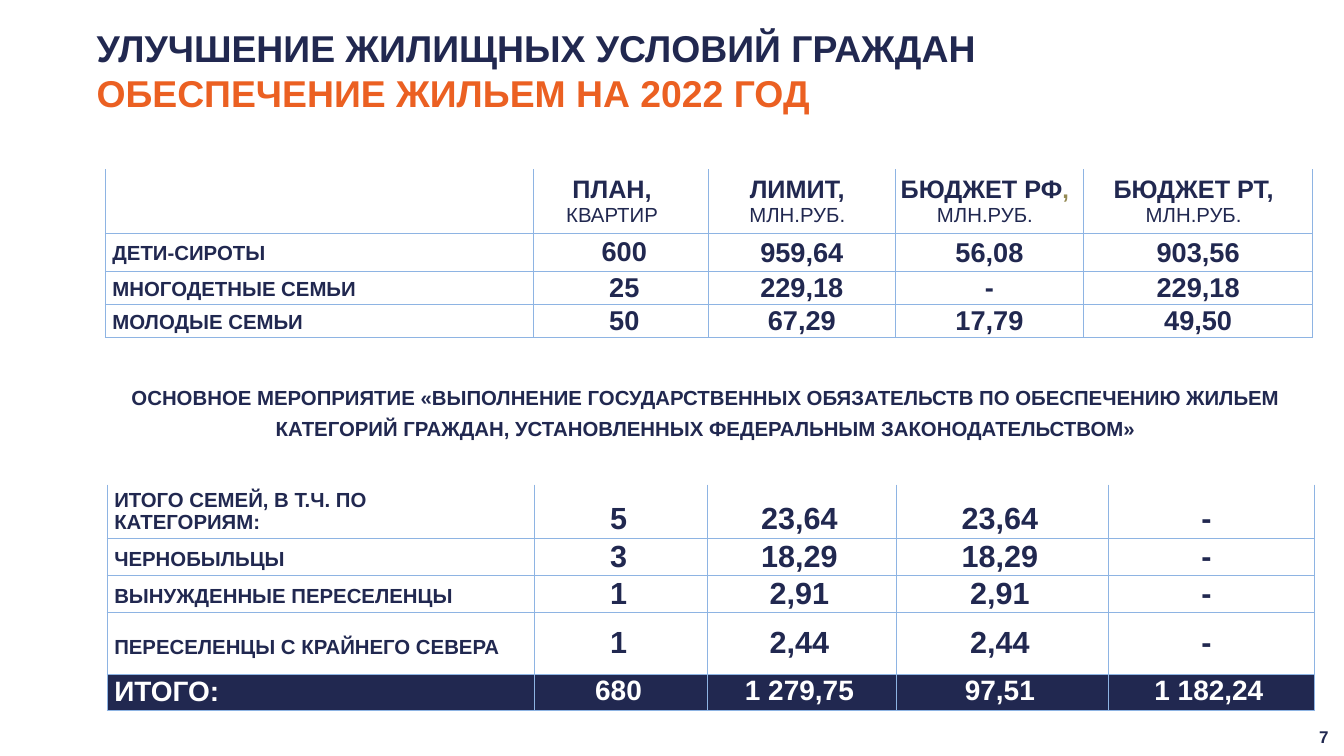
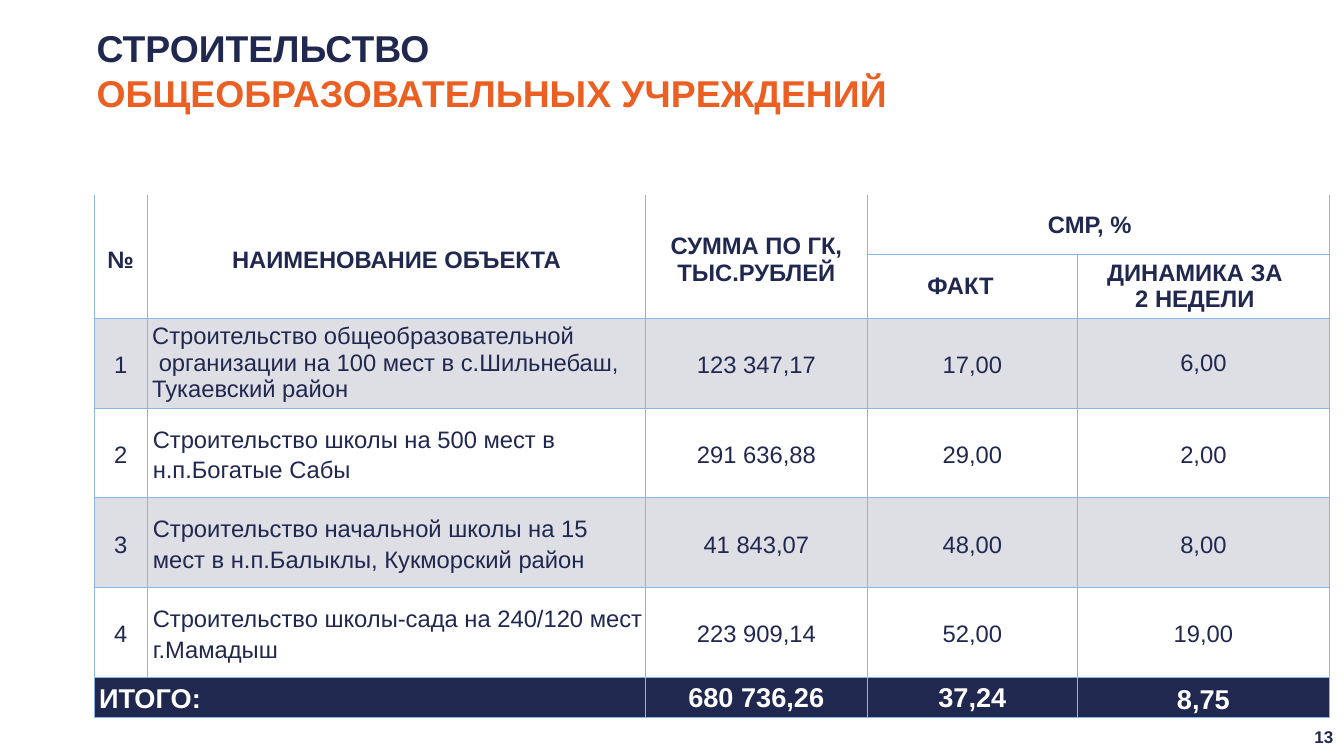
"""Build two slides with tables on housing provision and school construction."""
from lxml import etree
from pptx import Presentation
from pptx.dml.color import RGBColor
from pptx.enum.shapes import MSO_SHAPE as Shape
from pptx.enum.text import MSO_ANCHOR as Anchor, PP_ALIGN as Align
from pptx.oxml.ns import qn
from pptx.util import Pt

PX = 9144
SLIDE_SIZE = (2199, 1237)
NAVY = RGBColor(0x21, 0x28, 0x50)
ORANGE = RGBColor(0xEB, 0x60, 0x22)
OLIVE = RGBColor(0x94, 0x8A, 0x54)
WHITE = RGBColor(0xFF, 0xFF, 0xFF)
GREY = RGBColor(0xDE, 0xDF, 0xE5)
BORDER = RGBColor(0x8E, 0xB4, 0xE3)
BORDER_WIDTH = 12700

BASE = dict(size=24, bold=True, color=NAVY, align=Align.CENTER, line=None,
            anchor=Anchor.MIDDLE, insets=(0, 0, 0, 0), fill=WHITE)


def style(base=BASE, **changes):
    return {**base, **changes}


TITLE = style(size=44, align=Align.LEFT, anchor=Anchor.TOP, insets=(1, 2, 0, 0))
SUBTITLE = style(anchor=Anchor.TOP, line=Pt(36.3), insets=(0, 1, 0, 0))
NUMBER = style(size=20, insets=(10, 5, 10, 5))

HEADER = style(insets=(0, 0, 15, 0))
PLAN_HEADER = style(insets=(0, 0, 28, 0))
LABEL = style(align=Align.LEFT, insets=(12, 4, 0, 0))
COUNT = style(size=32, insets=(12, 0, 0, 0))
AMOUNT = style(size=32, insets=(1, 1, 1, 0))
FAMILY = [LABEL, COUNT] + [AMOUNT] * 3


def category_styles(label_top, value_top, anchor=Anchor.MIDDLE, label_right=0):
    label = style(LABEL, insets=(12, label_top, label_right, 0))
    value = style(size=36, anchor=anchor, insets=(0, value_top, 8, 0))
    return [label] + [value] * 3 + [style(value, insets=(0, value_top, 16, 0))]


SUM_VALUE = style(size=33, color=WHITE, fill=NAVY, anchor=Anchor.TOP, insets=(0, 1, 8, 0))
SUM_LABEL = style(SUM_VALUE, align=Align.LEFT, insets=(12, 4, 0, 0))

COLUMN_HEAD = style(size=28, insets=(0, 12, 0, 0))
SHARE_HEAD = style(size=28, insets=(0, 0, 28, 0))
SCHOOL_HEAD = [COLUMN_HEAD, COLUMN_HEAD, style(COLUMN_HEAD, insets=(0, 10, 0, 0)),
               SHARE_HEAD, SHARE_HEAD]
SCHOOL_VALUE = style(size=28, bold=False, line=1.15, insets=(1, 1, 1, 0))
SCHOOL_NAME = style(SCHOOL_VALUE, align=Align.LEFT, insets=(9, 1, 1, 0))
SCHOOL = [SCHOOL_VALUE, SCHOOL_NAME] + [SCHOOL_VALUE] * 3
SCHOOL_GREY = [style(item, fill=GREY) for item in SCHOOL]
SCHOOL_FIRST = [SCHOOL_GREY[0], style(SCHOOL_GREY[1], line=None, insets=(8, 0, 0, 0)),
                *SCHOOL_GREY[2:4], style(SCHOOL_GREY[4], line=None, insets=(0, 0, 0, 0))]
TOTAL_VALUE = style(size=32, color=WHITE, fill=NAVY, insets=(2, 2, 2, 0))
TOTAL_LABEL = style(TOTAL_VALUE, align=Align.LEFT, line=1.15, insets=(8, 0, 0, 0))
TOTAL = [TOTAL_LABEL, TOTAL_LABEL, TOTAL_VALUE, TOTAL_VALUE, style(TOTAL_VALUE, line=1.15)]


def unit_header(name, comma, unit):
    return [(name, dict(size=29.7)), (comma, dict(size=28, color=OLIVE)), (unit, dict(bold=False))]


SLIDES = [
    dict(
        number="7",
        title=("УЛУЧШЕНИЕ ЖИЛИЩНЫХ УСЛОВИЙ ГРАЖДАН", "ОБЕСПЕЧЕНИЕ ЖИЛЬЕМ НА 2022 ГОД"),
        subtitle="ОСНОВНОЕ МЕРОПРИЯТИЕ «ВЫПОЛНЕНИЕ ГОСУДАРСТВЕННЫХ ОБЯЗАТЕЛЬСТВ ПО ОБЕСПЕЧЕНИЮ "
                 "ЖИЛЬЕМ КАТЕГОРИЙ ГРАЖДАН, УСТАНОВЛЕННЫХ ФЕДЕРАЛЬНЫМ ЗАКОНОДАТЕЛЬСТВОМ»",
        tables=[
            dict(at=(172, 277), widths=(700, 287, 306, 308, 375), merges=[], rows=[
                (105, [None, unit_header("ПЛАН,", " ", "КВАРТИР"),
                       unit_header("ЛИМИТ,", " ", "МЛН.РУБ."),
                       unit_header("БЮДЖЕТ РФ", ", ", "МЛН.РУБ."),
                       [("БЮДЖЕТ РТ, ", dict(size=29.7)), ("МЛН.РУБ.", dict(bold=False))]],
                 [LABEL, PLAN_HEADER, HEADER, HEADER, HEADER]),
                (62, ["ДЕТИ-СИРОТЫ", "600", "959,64", "56,08", "903,56"], FAMILY),
                (50, ["МНОГОДЕТНЫЕ СЕМЬИ", "25", "229,18", "-", "229,18"], FAMILY),
                (50, ["МОЛОДЫЕ СЕМЬИ", "50", "67,29", "17,79", "49,50"], FAMILY),
            ]),
            dict(at=(175, 793), widths=(700, 282, 310, 346, 338), merges=[], rows=[
                (75, ["ИТОГО СЕМЕЙ, В Т.Ч. ПО КАТЕГОРИЯМ:", "5", "23,64", "23,64", "-"],
                 category_styles(0, 28, Anchor.TOP, label_right=100)),
                (52, ["ЧЕРНОБЫЛЬЦЫ", "3", "18,29", "18,29", "-"], category_styles(7, 1)),
                (54, ["ВЫНУЖДЕННЫЕ ПЕРЕСЕЛЕНЦЫ", "1", "2,91", "2,91", "-"],
                 category_styles(9, 0)),
                (101, ["ПЕРЕСЕЛЕНЦЫ С КРАЙНЕГО СЕВЕРА", "1", "2,44", "2,44", "-"],
                 category_styles(12, 0)),
                (57, ["ИТОГО:", "680", "1 279,75", "97,51", "1 182,24"],
                 [SUM_LABEL] + [SUM_VALUE] * 4),
            ]),
        ],
    ),
    dict(
        number="13",
        title=("СТРОИТЕЛЬСТВО", "ОБЩЕОБРАЗОВАТЕЛЬНЫХ УЧРЕЖДЕНИЙ"),
        subtitle=None,
        tables=[
            dict(at=(154, 319), widths=(87, 815, 363, 344, 412),
                 merges=[(0, 0, 1, 0), (0, 1, 1, 1), (0, 2, 1, 2), (0, 3, 0, 4), (6, 0, 6, 1)],
                 rows=[
                (98, ["№", "НАИМЕНОВАНИЕ ОБЪЕКТА", "СУММА ПО ГК,\nТЫС.РУБЛЕЙ", "СМР, %", None],
                 SCHOOL_HEAD),
                (98, [None, None, None, "ФАКТ ", "ДИНАМИКА ЗА\n2 НЕДЕЛИ"], SCHOOL_HEAD),
                (147, ["1", "Строительство общеобразовательной\n организации на 100 мест "
                       "в с.Шильнебаш, Тукаевский район", "123 347,17", "17,00", "6,00"],
                 SCHOOL_FIRST),
                (147, ["2", "Строительство школы на 500 мест в н.п.Богатые Сабы",
                       "291 636,88", "29,00", "2,00"], SCHOOL),
                (147, ["3", "Строительство начальной школы на 15 мест в н.п.Балыклы, "
                       "Кукморский район", "41 843,07", "48,00", "8,00"], SCHOOL_GREY),
                (147, ["4", "Строительство школы-сада на 240/120 мест г.Мамадыш",
                       "223 909,14", "52,00", "19,00"], SCHOOL),
                (65, ["ИТОГО:", None, "680 736,26", "37,24", "8,75"], TOTAL),
            ]),
        ],
    ),
]


def px(*lengths):
    return [length * PX for length in lengths]


def set_margins(target, insets):
    for side, length in zip(("left", "top", "right", "bottom"), px(*insets)):
        setattr(target, f"margin_{side}", length)


def add_run(paragraph, text, look):
    run = paragraph.add_run()
    run.text = text
    for name, value in dict(name="Arial", size=Pt(look["size"]), bold=look["bold"]).items():
        setattr(run.font, name, value)
    run.font.color.rgb = look["color"]


def write_text(frame, content, look):
    lines = content.split("\n") if isinstance(content, str) else [content]
    for index, line in enumerate(lines):
        paragraph = frame.add_paragraph() if index else frame.paragraphs[0]
        for name, value in dict(alignment=look["align"], line_spacing=look["line"]).items():
            setattr(paragraph, name, value)
        for text, changes in [(line, {})] if isinstance(line, str) else line:
            add_run(paragraph, text, style(look, **changes))


def fill_frame(shape, content, look):
    frame = shape.text_frame
    frame.word_wrap = True
    frame.vertical_anchor = look["anchor"]
    set_margins(frame, look["insets"])
    write_text(frame, content, look)
    return frame


def add_text(slide, box, content, look):
    return fill_frame(slide.shapes.add_textbox(*px(*box)), content, look)


def add_number(slide, number):
    badge = slide.shapes.add_shape(Shape.ROUNDED_RECTANGLE, *px(2130, 1176, 72, 59))
    badge.shadow.inherit = False
    badge.fill.background()
    badge.line.fill.background()
    fill_frame(badge, number, NUMBER)


def set_borders(cell, is_top_row):
    properties = cell._tc.get_or_add_tcPr()
    for position, side in enumerate("LRTB"):
        line = etree.Element(qn(f"a:ln{side}"), w=str(BORDER_WIDTH))
        properties.insert(position, line)
        if side == "T" and is_top_row:
            etree.SubElement(line, qn("a:noFill"))
        else:
            fill = etree.SubElement(line, qn("a:solidFill"))
            etree.SubElement(fill, qn("a:srgbClr"), val=str(BORDER))


def add_data_table(slide, at, widths, rows, merges):
    heights = [row[0] for row in rows]
    size = (sum(widths), sum(heights))
    table = slide.shapes.add_table(len(rows), len(widths), *px(*at, *size)).table
    table.first_row = table.horz_banding = False
    for column, width in zip(table.columns, px(*widths)):
        column.width = width
    for row, height in zip(table.rows, px(*heights)):
        row.height = height
    for first_row, first_column, last_row, last_column in merges:
        table.cell(first_row, first_column).merge(table.cell(last_row, last_column))
    for row_index, (_, contents, looks) in enumerate(rows):
        for column_index, (content, look) in enumerate(zip(contents, looks)):
            cell = table.cell(row_index, column_index)
            cell.vertical_anchor = look["anchor"]
            set_margins(cell, look["insets"])
            cell.fill.solid()
            cell.fill.fore_color.rgb = look["fill"]
            set_borders(cell, row_index == 0)
            if content:
                write_text(cell.text_frame, content, look)


def add_title(slide, first_line, second_line):
    paragraph = add_text(slide, (157, 39, 1986, 150), first_line, TITLE).paragraphs[0]
    paragraph.add_line_break()
    add_run(paragraph, second_line, style(TITLE, color=ORANGE))


def main():
    presentation = Presentation()
    presentation.slide_width, presentation.slide_height = px(*SLIDE_SIZE)
    for content in SLIDES:
        slide = presentation.slides.add_slide(presentation.slide_layouts[6])
        add_number(slide, content["number"])
        add_title(slide, *content["title"])
        if content["subtitle"]:
            add_text(slide, (155, 619, 1998, 97), content["subtitle"], SUBTITLE)
        for table in content["tables"]:
            add_data_table(slide, **table)
    presentation.save("out.pptx")


if __name__ == "__main__":
    main()
